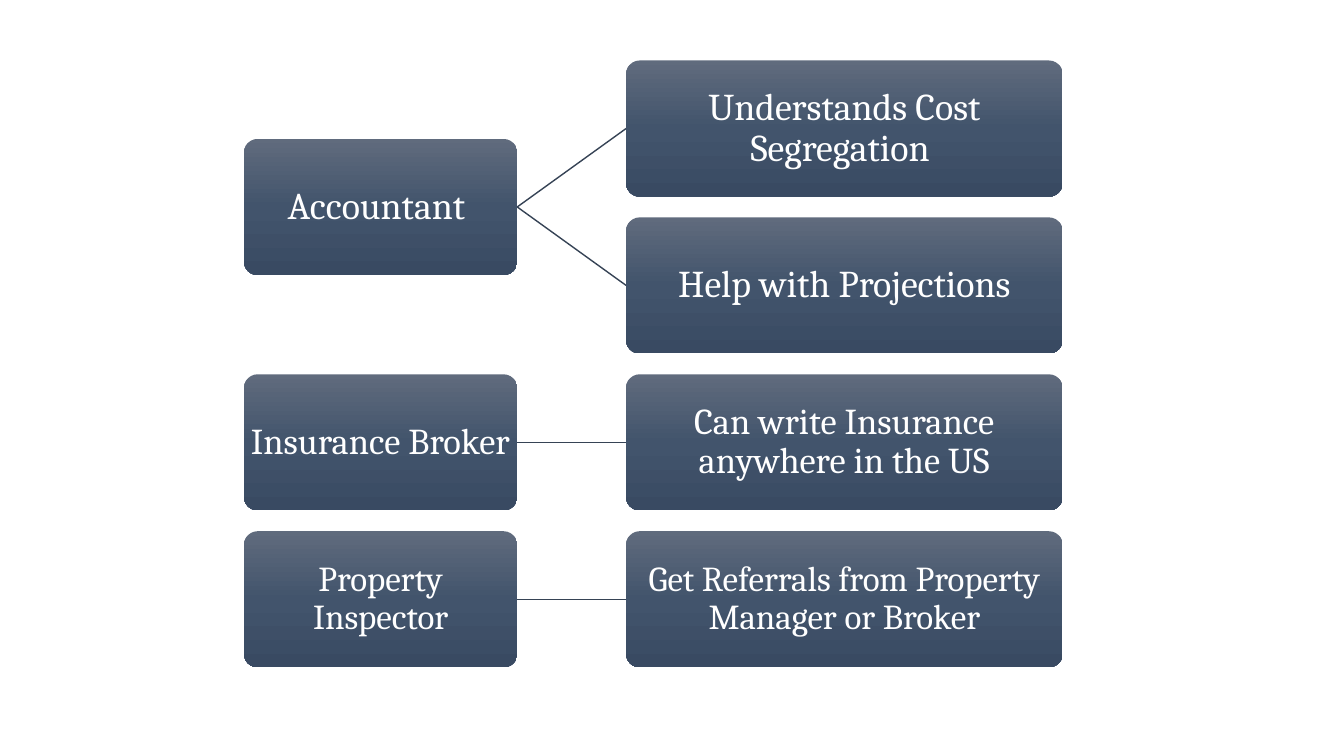
from copy import deepcopy

from pptx import Presentation
from pptx.dml.color import RGBColor
from pptx.enum.shapes import MSO_CONNECTOR as CONNECTOR, MSO_SHAPE as SHAPE
from pptx.enum.text import MSO_ANCHOR as ANCHOR, PP_ALIGN as ALIGN
from pptx.oxml.ns import qn
from pptx.oxml.xmlchemy import OxmlElement
from pptx.util import Pt

PX = 9144
COLORS = {"top": "606B7D", "middle": "42546C", "bottom": "394A62", "line": "364355", "text": "FFFFFF"}
GRADIENT = [(0, "top"), (0.5, "middle"), (1, "bottom")]
TEAM = [
    ("Accountant ", 27, ["Understands Cost Segregation ", "Help with Projections"]),
    ("Insurance Broker", 26, ["Can write Insurance anywhere in the US"]),
    ("Property Inspector", 25, ["Get Referrals from Property Manager or Broker"]),
]
CARD_HEIGHT = 135
ROLE_WIDTH = 271
DUTY_WIDTH = 433


def px(*lengths):
    return [round(length * PX) for length in lengths]


def color(name):
    return RGBColor.from_string(COLORS[name])


def fill_gradient(shape):
    shape.fill.gradient()
    shape.fill.gradient_angle = 270
    stops = shape._element.spPr.find(qn("a:gradFill")).find(qn("a:gsLst"))
    stops.append(deepcopy(stops[-1]))
    for stop, (position, name) in zip(shape.fill.gradient_stops, GRADIENT):
        stop.position = position
        stop.color.rgb = color(name)


def add_card(slide, left, top, width, text, size):
    shape = slide.shapes.add_shape(SHAPE.ROUNDED_RECTANGLE, *px(left, top, width, CARD_HEIGHT))
    shape.adjustments[0] = 0.1
    shape.shadow.inherit = False
    shape.line.fill.background()
    fill_gradient(shape)
    frame = shape.text_frame
    frame.word_wrap = True
    frame.vertical_anchor = ANCHOR.MIDDLE
    frame.margin_left, frame.margin_top, frame.margin_right, frame.margin_bottom = px(2, 2, 2, 2)
    paragraph = frame.paragraphs[0]
    paragraph.text = text
    paragraph.alignment = ALIGN.CENTER
    paragraph.line_spacing = 0.9
    paragraph.font.name = "Cambria"
    paragraph.font.size = Pt(size)
    paragraph.font.color.rgb = color("text")


def add_branch(slide, *ends):
    connector = slide.shapes.add_connector(CONNECTOR.STRAIGHT, *px(*ends))
    connector.line.color.rgb = color("line")
    connector.line.width = Pt(1)
    connector._element.spPr.append(OxmlElement("a:effectLst"))


def add_team_tree(slide, left, top, width, height):
    row_count = sum(len(duties) for _, _, duties in TEAM)
    pitch = (height - CARD_HEIGHT) / (row_count - 1)
    duty_left = left + width - DUTY_WIDTH
    row = 0
    for role, size, duties in TEAM:
        duty_tops = [top + (row + index) * pitch for index in range(len(duties))]
        role_top = sum(duty_tops) / len(duties)
        add_card(slide, left, role_top, ROLE_WIDTH, role, size)
        for duty, duty_top in zip(duties, duty_tops):
            add_branch(slide, left + ROLE_WIDTH, role_top + CARD_HEIGHT / 2,
                       duty_left, duty_top + CARD_HEIGHT / 2)
            add_card(slide, duty_left, duty_top, DUTY_WIDTH, duty, size)
        row += len(duties)


def main():
    presentation = Presentation()
    presentation.slide_width, presentation.slide_height = px(1333, 750)
    slide = presentation.slides.add_slide(presentation.slide_layouts.get_by_name("Blank"))
    add_team_tree(slide, 242, 60, 812, 602)
    presentation.save("out.pptx")


if __name__ == "__main__":
    main()
